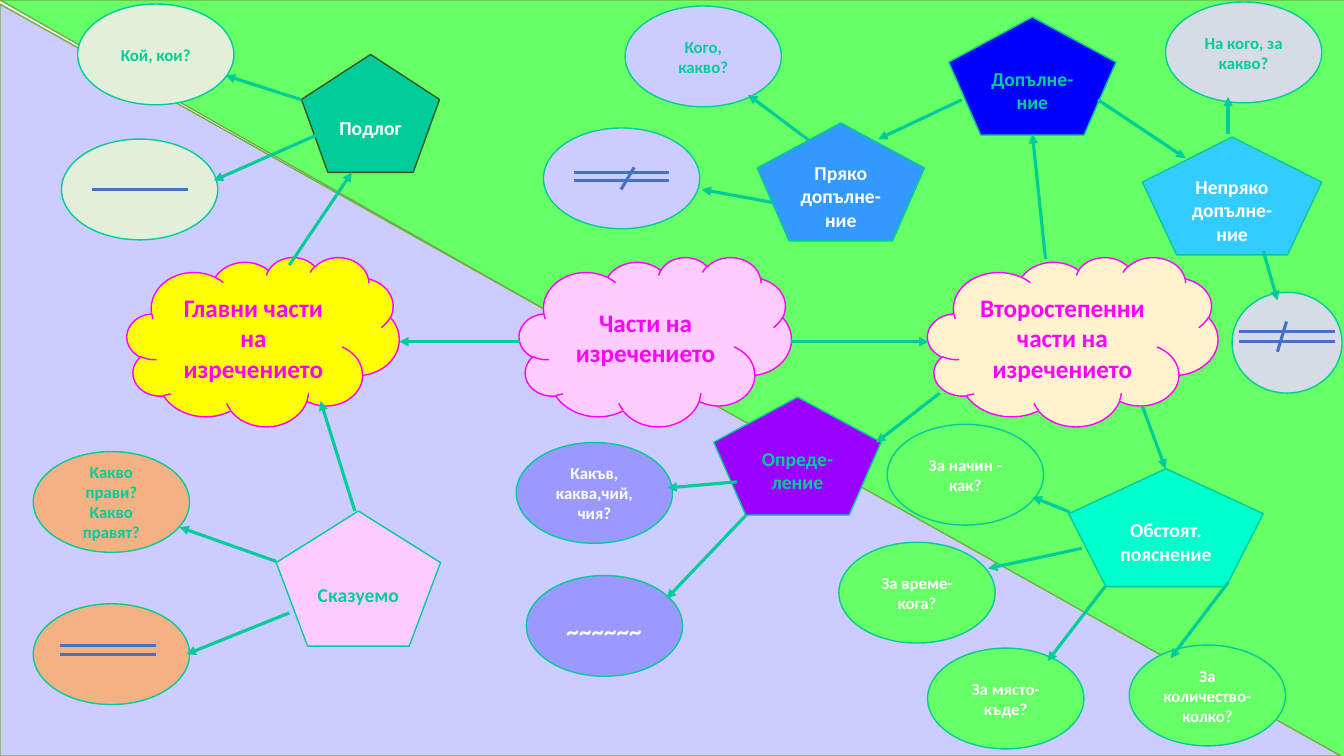
from pptx import Presentation
from pptx.dml.color import RGBColor
from pptx.enum.shapes import MSO_CONNECTOR, MSO_SHAPE
from pptx.enum.text import MSO_ANCHOR, MSO_AUTO_SIZE, PP_ALIGN
from pptx.oxml.ns import qn
from pptx.util import Inches, Pt
from lxml.etree import SubElement

WHITE = RGBColor(0xFF, 0xFF, 0xFF)
GREEN = RGBColor(0x66, 0xFF, 0x66)
LILAC = RGBColor(0xCC, 0xCC, 0xFF)
OLIVE = RGBColor(0x70, 0xAD, 0x47)
PINK = RGBColor(0xFF, 0xCC, 0xFF)
MAGENTA = RGBColor(0xFF, 0x00, 0xFF)
YELLOW = RGBColor(0xFF, 0xFF, 0x00)
CREAM = RGBColor(0xFF, 0xF2, 0xCC)
TEAL = RGBColor(0x00, 0xCC, 0x99)
FOREST = RGBColor(0x38, 0x57, 0x23)
MINT = RGBColor(0xE2, 0xF0, 0xD9)
PEACH = RGBColor(0xF4, 0xB1, 0x83)
BLUE = RGBColor(0x00, 0x00, 0xFF)
AZURE = RGBColor(0x33, 0x99, 0xFF)
SKY = RGBColor(0x33, 0xCC, 0xFF)
GREY = RGBColor(0xD6, 0xDC, 0xE5)
PURPLE = RGBColor(0x99, 0x00, 0xFF)
VIOLET = RGBColor(0x99, 0x99, 0xFF)
AQUA = RGBColor(0x00, 0xFF, 0xCC)
STEEL = RGBColor(0x44, 0x72, 0xC4)

deck = Presentation()
deck.slide_width, deck.slide_height = Inches(13.33), Inches(7.5)
slide = deck.slides.add_slide(deck.slide_layouts[6])


def write(frame, text, size, color, align):
    frame.text = text
    for par in frame.paragraphs:
        par.alignment = align
        for run in par.runs:
            run.font.color.rgb = color
            look = {"name": "Calibri", "size": Pt(size), "bold": True}
            for key, value in look.items():
                setattr(run.font, key, value)


def draw(kind, box, fill, edge, text="", size=12, color=WHITE):
    shape = slide.shapes.add_shape(kind, *map(Inches, box))
    shape.shadow.inherit = False
    shape.fill.solid()
    shape.fill.fore_color.rgb = fill
    shape.line.color.rgb = edge
    shape.line.width = Pt(1)
    if text:
        shape.text_frame.vertical_anchor = MSO_ANCHOR.MIDDLE
        write(shape.text_frame, text, size, color, PP_ALIGN.CENTER)
    return shape


# Two-tone background
draw(MSO_SHAPE.RIGHT_TRIANGLE, (0, 0, 13.34, 7.58), GREEN, OLIVE).rotation = 180
draw(MSO_SHAPE.RIGHT_TRIANGLE, (0, 0.04, 13.3, 7.46), LILAC, OLIVE)

# Main topics
clouds = [
    (5.15, 2.7, PINK, "Части на изречението"),
    (1.26, 2.7, YELLOW, "Главни части на изречението"),
    (9.2, 2.88, CREAM, "Второстепенни части на изречението"),
]
for x, width, fill, text in clouds:
    draw(MSO_SHAPE.CLOUD, (x, 2.55, width, 1.68), fill, MAGENTA, text, 18, MAGENTA)

# Parts of the sentence
parts = [
    (2.99, 0.54, 1.37, 1.17, TEAL, FOREST, WHITE, "Подлог"),
    (2.74, 5.07, 1.63, 1.34, PINK, TEAL, TEAL, "Сказуемо"),
    (9.41, 0.17, 1.66, 1.17, BLUE, TEAL, TEAL, "Допълне-ние"),
    (7.51, 1.22, 1.66, 1.17, AZURE, TEAL, WHITE, "Пряко\nдопълне-ние"),
    (11.33, 1.36, 1.78, 1.17, SKY, TEAL, WHITE, "Непряко\nдопълне-ние"),
    (7.08, 3.94, 1.66, 1.17, PURPLE, TEAL, TEAL, "Опреде-ление"),
    (10.6, 4.65, 1.93, 1.17, AQUA, TEAL, WHITE, "Обстоят. пояснение"),
]
for *box, fill, edge, color, text in parts:
    draw(MSO_SHAPE.REGULAR_PENTAGON, box, fill, edge, text, 14, color)

# Questions and underlining marks
bubbles = [
    (0.77, 0.04, 1.55, MINT, TEAL, "Кой, кои?"),
    (0.61, 1.38, 1.55, MINT, TEAL, ""),
    (0.33, 4.48, 1.55, PEACH, TEAL, "Какво прави?\nКакво правят?"),
    (0.33, 5.99, 1.55, PEACH, TEAL, ""),
    (6.2, 0.06, 1.55, LILAC, TEAL, "Кого, какво?"),
    (11.56, 0.02, 1.55, GREY, TEAL, "На кого, за какво?"),
    (5.39, 1.27, 1.55, LILAC, TEAL, ""),
    (12.22, 2.9, 1.09, GREY, TEAL, ""),
    (5.12, 4.39, 1.55, VIOLET, WHITE, "Какъв, каква,чий, чия?"),
    (5.22, 5.71, 1.55, VIOLET, WHITE, ""),
    (8.8, 4.21, 1.55, GREEN, WHITE, "За начин - как?"),
    (8.32, 5.38, 1.55, GREEN, WHITE, "За време- кога?"),
    (9.2, 6.43, 1.55, GREEN, WHITE, "За място- къде?"),
    (11.2, 6.4, 1.55, GREEN, WHITE, "За количество- колко?"),
]
for x, y, width, fill, color, text in bubbles:
    draw(MSO_SHAPE.OVAL, (x, y, width, 1), fill, TEAL, text, 12, color)

wave = slide.shapes.add_textbox(*map(Inches, (5.52, 6.06, 0.96, 0.4))).text_frame
wave.word_wrap = False
wave.auto_size = MSO_AUTO_SIZE.SHAPE_TO_FIT_TEXT
write(wave, "~~~~~~", 18, WHITE, PP_ALIGN.LEFT)

arrows = [
    (5.16, 3.39, 3.96, 3.39), (7.85, 3.39, 9.21, 3.39),
    (2.87, 2.63, 3.49, 1.71), (3.52, 5.07, 3.18, 3.98),
    (2.99, 0.99, 2.24, 0.75), (3.14, 1.34, 2.12, 1.79),
    (2.87, 6.08, 1.85, 6.49), (2.74, 5.57, 1.78, 5.23),
    (10.37, 2.57, 10.24, 1.33), (9.54, 0.99, 8.71, 1.38),
    (10.89, 0.99, 11.76, 1.57), (8.02, 1.39, 7.42, 0.94),
    (7.67, 2.01, 6.96, 1.88), (12.18, 1.33, 12.18, 0.96),
    (12.53, 2.49, 12.67, 2.98), (7.31, 4.78, 6.62, 4.84),
    (7.4, 5.11, 6.61, 5.94), (9.32, 3.9, 8.69, 4.39),
    (11.33, 4.03, 11.56, 4.65), (10.73, 5.44, 9.8, 5.64),
    (10.61, 5.08, 10.24, 4.93), (10.96, 5.82, 10.39, 6.56),
    (12.18, 5.78, 11.61, 6.53),
]
strokes = [(6.16, 1.88, 6.29, 1.66), (12.67, 3.49, 12.76, 3.19)]
rules = [(0.91, 1.88), (0.6, 6.4), (0.6, 6.49), (5.69, 1.71),
         (5.69, 1.79), (12.29, 3.29), (12.29, 3.39)]
strokes += [(x, y, x + 0.95, y) for x, y in rules]

for color, group in ((TEAL, arrows), (STEEL, strokes)):
    for ends in group:
        link = slide.shapes.add_connector(MSO_CONNECTOR.STRAIGHT, *map(Inches, ends))
        link.line.color.rgb = color
        link.line.width = Pt(2.25)
        if group is arrows:
            SubElement(link.line._get_or_add_ln(), qn("a:tailEnd"), type="triangle")
        SubElement(link._element.spPr, qn("a:effectLst"))

deck.save("out.pptx")
